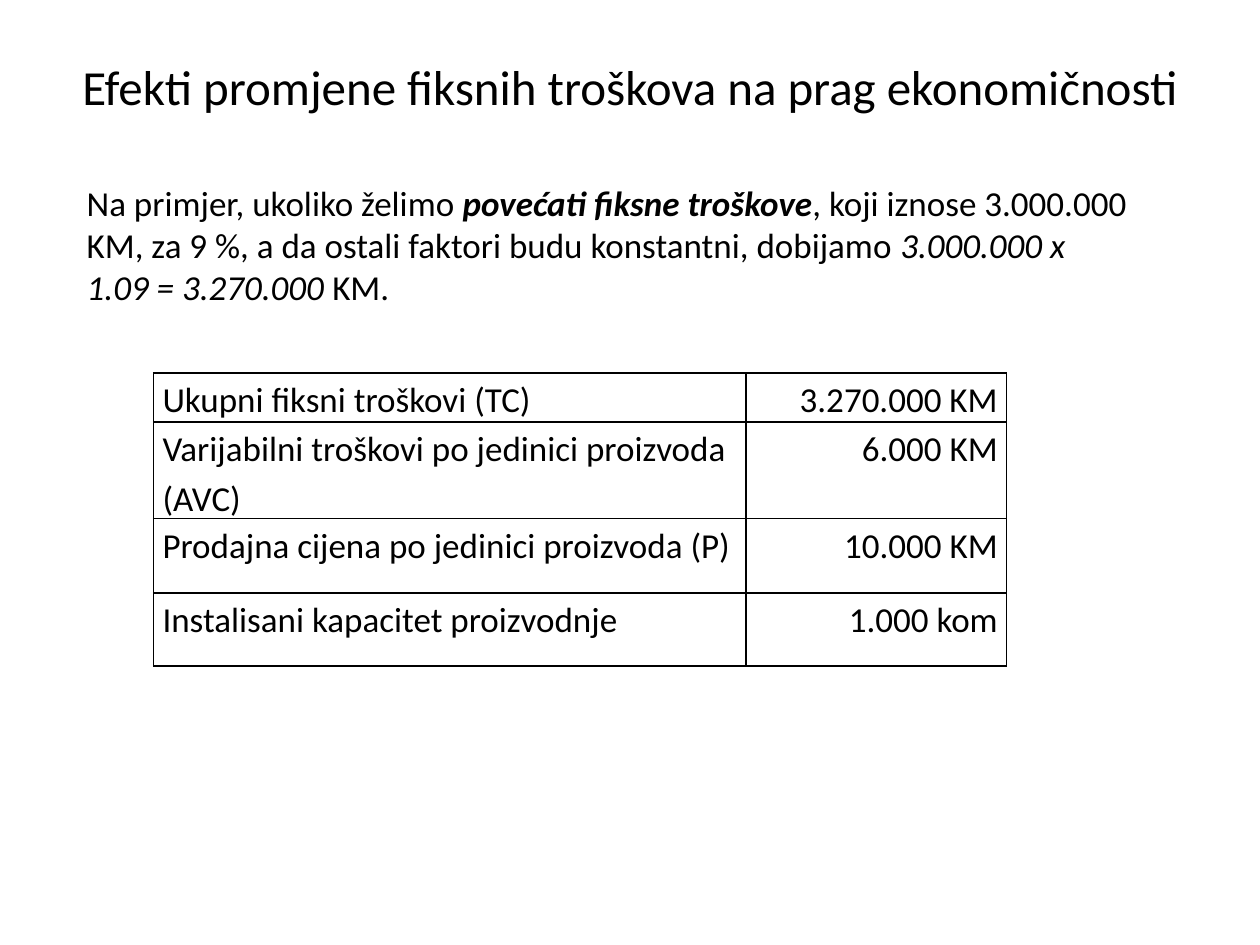
from lxml import etree
from pptx import Presentation
from pptx.dml.color import RGBColor
from pptx.enum import text
from pptx.oxml import ns
from pptx.util import Inches, Pt

BLACK = RGBColor(0x00, 0x00, 0x00)
FONT = "Calibri"
BODY_SIZE = 20
TITLE = "Efekti promjene fiksnih troškova na prag ekonomičnosti"
EXAMPLE = [
    ("Na primjer, ukoliko želimo ", False, False),
    ("povećati fiksne troškove", True, True),
    (", koji iznose 3.000.000 KM, za 9 %, a da ostali faktori budu konstantni, dobijamo ", False, False),
    ("3.000.000 x 1.09 = 3.270.000 ", False, True),
    ("KM.", False, False),
]
COSTS = [
    ("Ukupni fiksni troškovi (TC)", "3.270.000 KM"),
    ("Varijabilni troškovi po jedinici proizvoda (AVC)", "6.000 KM"),
    ("Prodajna cijena po jedinici proizvoda (P)", "10.000 KM"),
    ("Instalisani kapacitet proizvodnje", "1.000 kom"),
]
COLUMN_WIDTHS = [4.7, 2.07]
ROW_HEIGHTS = [0.39, 0.71, 0.59, 0.58]


def style_span(span, size, bold=False, italic=False):
    span.font.name = FONT
    span.font.size = Pt(size)
    span.font.bold = bold
    span.font.italic = italic
    span.font.color.rgb = BLACK


def add_text_frame(page, left, top, width, height):
    box = page.shapes.add_textbox(Inches(left), Inches(top), Inches(width), Inches(height))
    box.text_frame.word_wrap = True
    return box.text_frame


def add_title(page, left, top, width, height):
    frame = add_text_frame(page, left, top, width, height)
    frame.vertical_anchor = text.MSO_ANCHOR.MIDDLE
    para = frame.paragraphs[0]
    para.text = TITLE
    para.alignment = text.PP_ALIGN.CENTER
    style_span(para.runs[0], 28)


def add_example(page, left, top, width, height):
    frame = add_text_frame(page, left, top, width, height)
    frame.auto_size = text.MSO_AUTO_SIZE.SHAPE_TO_FIT_TEXT
    para = frame.paragraphs[0]
    for wording, bold, italic in EXAMPLE:
        span = para.add_run()
        span.text = wording
        style_span(span, BODY_SIZE, bold, italic)


def add_borders(cell):
    properties = cell._tc.get_or_add_tcPr()
    for index, side in enumerate(("lnL", "lnR", "lnT", "lnB")):
        line = etree.Element(ns.qn(f"a:{side}"), w=str(Pt(1)))
        fill = etree.SubElement(line, ns.qn("a:solidFill"))
        etree.SubElement(fill, ns.qn("a:srgbClr"), val=str(BLACK))
        properties.insert(index, line)


def fill_cell(cell, wording, alignment):
    cell.fill.background()
    cell.margin_left = cell.margin_right = Inches(0.07)
    cell.margin_top = cell.margin_bottom = 0
    para = cell.text_frame.paragraphs[0]
    para.text = wording
    para.alignment = alignment
    para.line_spacing = 1.15
    style_span(para.runs[0], BODY_SIZE)
    add_borders(cell)


def add_cost_table(page, left, top):
    frame = page.shapes.add_table(
        len(COSTS), len(COLUMN_WIDTHS), Inches(left), Inches(top),
        Inches(sum(COLUMN_WIDTHS)), Inches(sum(ROW_HEIGHTS)))
    table = frame.table
    table.first_row = table.horz_banding = False
    for column, width in zip(table.columns, COLUMN_WIDTHS):
        column.width = Inches(width)
    for row, height, wordings in zip(table.rows, ROW_HEIGHTS, COSTS):
        row.height = Inches(height)
        alignments = (text.PP_ALIGN.LEFT, text.PP_ALIGN.RIGHT)
        for cell, wording, alignment in zip(row.cells, wordings, alignments):
            fill_cell(cell, wording, alignment)


def main():
    deck = Presentation()
    deck.slide_width = Inches(10)
    deck.slide_height = Inches(7.5)
    page = deck.slides.add_slide(deck.slide_layouts[6])
    add_title(page, 0.5, 0.3, 9, 0.77)
    add_example(page, 0.59, 1.39, 8.5, 1.11)
    add_cost_table(page, 1.22, 2.96)
    deck.save("out.pptx")


if __name__ == "__main__":
    main()
